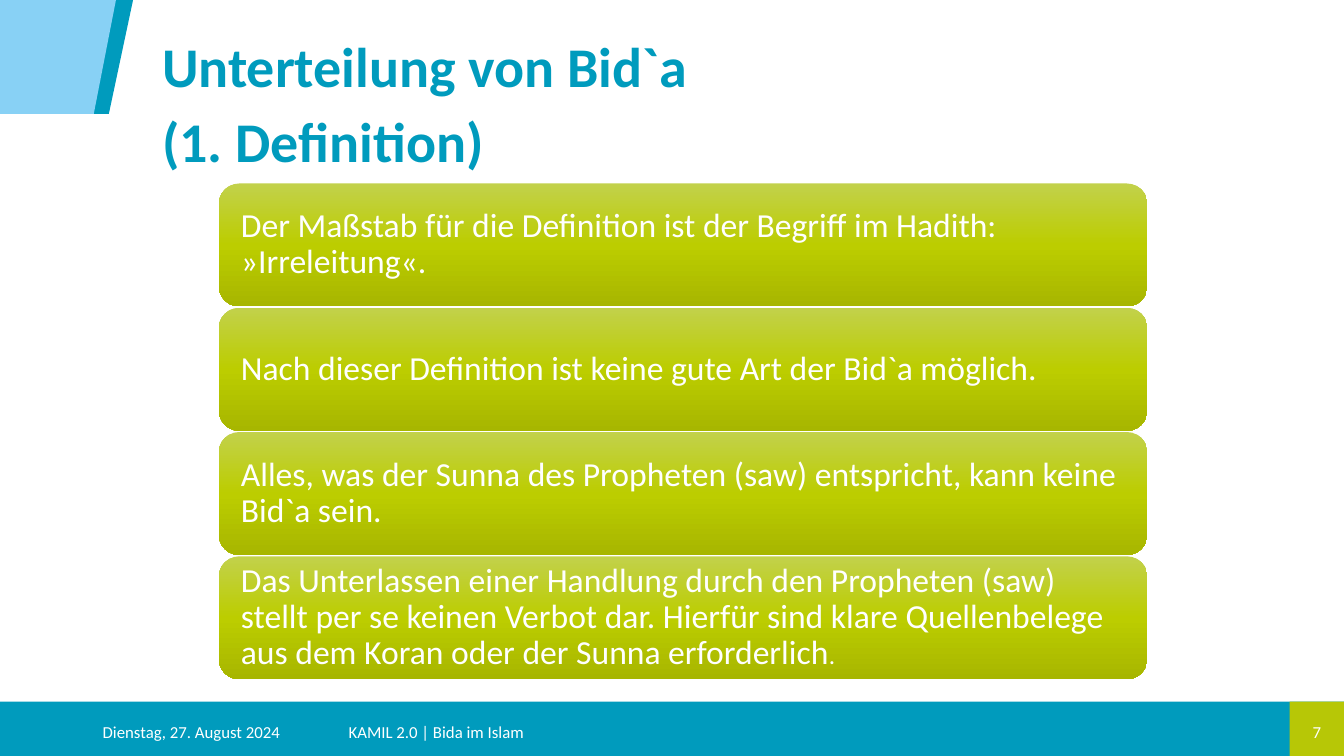
from copy import deepcopy
from pptx import Presentation
from pptx.dml.color import RGBColor as RGB
from pptx.enum.shapes import MSO_SHAPE as SHAPE
from pptx.enum.text import MSO_ANCHOR as ANCHOR, PP_ALIGN as ALIGN
from pptx.oxml.ns import qn
from pptx.util import Inches, Pt

BLUE = RGB(0x00, 0x9B, 0xBD)
SKY = RGB(0x88, 0xD1, 0xF5)
GREEN = RGB(0xB7, 0xC7, 0x06)
WHITE = RGB(0xFF, 0xFF, 0xFF)
SHADES = [
    (0, RGB(0xC2, 0xD1, 0x4B)),
    (0.5, RGB(0xBC, 0xCD, 0x00)),
    (1, RGB(0xA7, 0xB6, 0x00)),
]

deck = Presentation()
deck.slide_width, deck.slide_height = Inches(13.33), Inches(7.5)
slide = deck.slides.add_slide(deck.slide_layouts[6])
shapes = slide.shapes


def paint(shape, color):
    shape.shadow.inherit = False
    shape.line.fill.background()
    shape.fill.solid()
    shape.fill.fore_color.rgb = color


def write(para, text, size, color=WHITE, bold=False):
    run = para.add_run()
    run.text = text
    run.font.color.rgb = color
    style = {"name": "Calibri", "size": Pt(size), "bold": bold}
    for key, value in style.items():
        setattr(run.font, key, value)


for left, width, color in [(0, 13.33, BLUE), (12.79, 0.54, GREEN)]:
    bar = shapes.add_shape(SHAPE.RECTANGLE, Inches(left), Inches(6.96), Inches(width), Inches(0.54))
    paint(bar, color)

for left, top, base, color in [(0.11, 1.32, 1.08, BLUE), (0, 1.15, 0.93, SKY)]:
    pen = shapes.build_freeform(Inches(left), 0)
    edge = [(top, 0), (base, 1.13), (left, 1.13)]
    pen.add_line_segments([(Inches(x), Inches(y)) for x, y in edge], close=True)
    paint(pen.convert_to_shape(), color)

TEXTS = [
    (0.92, 7.06, 2.36, 0.4, ["Dienstag, 27. August 2024"], ALIGN.LEFT, 12, WHITE, False),
    (3.36, 7.06, 9.06, 0.4, ["KAMIL 2.0 | Bida im Islam"], ALIGN.LEFT, 12, WHITE, False),
    (12.79, 7.06, 0.54, 0.4, ["7"], ALIGN.CENTER, 12, WHITE, False),
    (1.51, 0.23, 7.01, 1.66, ["Unterteilung von Bid`a", "(1. Definition)"], ALIGN.LEFT, 40, BLUE, True),
]
for *place, lines, align, size, color, bold in TEXTS:
    frame = shapes.add_textbox(*map(Inches, place)).text_frame
    frame.word_wrap = True
    frame.vertical_anchor = ANCHOR.MIDDLE
    for i, line in enumerate(lines):
        para = frame.add_paragraph() if i else frame.paragraphs[0]
        para.alignment = align
        if len(lines) > 1:
            para.line_spacing = 0.9
        if i:
            para.space_before = Pt(10)
        write(para, line, size, color, bold)

POINTS = [
    [("Der Maßstab für die Definition ist der Begriff im Hadith: »Irreleitung«.", 24)],
    [("Nach dieser Definition ist keine gute Art der Bid`a möglich.", 24)],
    [("Alles, was der Sunna des Propheten (saw) entspricht, kann keine Bid`a sein.", 24)],
    [("Das Unterlassen einer Handlung durch den Propheten (saw) stellt per se keinen Verbot dar. "
      "Hierfür sind klare Quellenbelege aus dem Koran oder der Sunna erforderlich", 24), (".", 18)],
]
FRAME = {
    "word_wrap": True,
    "vertical_anchor": ANCHOR.MIDDLE,
    "margin_left": Inches(0.16),
    "margin_right": Inches(0.16),
    "margin_top": Inches(0.16),
    "margin_bottom": Inches(0.16),
}
for i, point in enumerate(POINTS):
    card = shapes.add_shape(
        SHAPE.ROUNDED_RECTANGLE, Inches(2.17), Inches(1.82 + i * 1.233), Inches(9.21), Inches(1.22))
    card.shadow.inherit = False
    card.line.fill.background()
    card.fill.gradient()
    card.fill.gradient_angle = 270
    stops = card.fill._xPr.find(qn("a:gradFill")).find(qn("a:gsLst"))
    stops.insert(1, deepcopy(stops[0]))
    for stop, (spot, shade) in zip(card.fill.gradient_stops, SHADES):
        stop.position = spot
        stop.color.rgb = shade
    for key, value in FRAME.items():
        setattr(card.text_frame, key, value)
    para = card.text_frame.paragraphs[0]
    para.alignment = ALIGN.LEFT
    para.line_spacing = 0.9
    for text, size in point:
        write(para, text, size)

deck.save("out.pptx")
